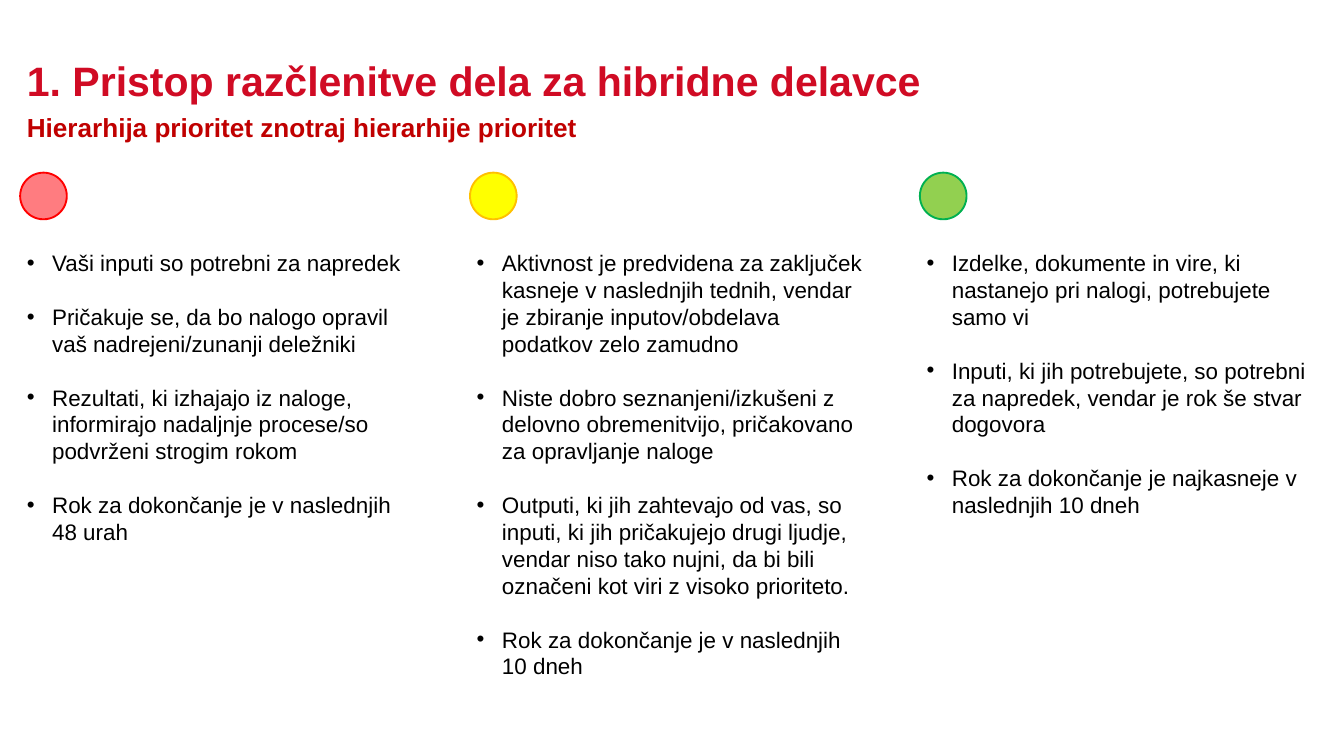
"""Build a slide with three priority columns for hybrid workers."""
from dataclasses import dataclass

import lxml.etree
import pptx
import pptx.dml.color
import pptx.enum.shapes
import pptx.enum.text
import pptx.oxml.ns
import pptx.util

Pt = pptx.util.Pt


@dataclass(frozen=True)
class Theme:
    font: str = "Arial"
    title_color: str = "D00B24"
    subtitle_color: str = "C00000"
    body_color: str = "000000"
    title_size: float = 44
    subtitle_size: float = 28
    body_size: float = 24
    line_pitch: float = 28.8


THEME = Theme()
LEFT, COLUMN_PITCH, COLUMN_WIDTH = 21.6, 482, 434
HEADING_WIDTH = 1398
LIGHT_TOP, LIGHT_SIZE = 185, 50
LIST_TOP, BULLET_INDENT = 263.5, 27

COLUMNS = [
    ("FF7C80", "FF0000", 330, [
        "Vaši inputi so potrebni za napredek",
        "Pričakuje se, da bo nalogo opravil vaš nadrejeni/zunanji deležniki",
        "Rezultati, ki izhajajo iz naloge, informirajo nadaljnje procese/so podvrženi strogim rokom",
        "Rok za dokončanje je v naslednjih 48 urah",
    ]),
    ("FFFF00", "FFC000", 480, [
        "Aktivnost je predvidena za zaključek kasneje v naslednjih tednih, vendar je zbiranje "
        "inputov/obdelava podatkov zelo zamudno",
        "Niste dobro seznanjeni/izkušeni z delovno obremenitvijo, pričakovano za opravljanje naloge",
        "Outputi, ki jih zahtevajo od vas, so inputi, ki jih pričakujejo drugi ljudje, vendar niso "
        "tako nujni, da bi bili označeni kot viri z visoko prioriteto.",
        "Rok za dokončanje je v naslednjih 10 dneh",
    ]),
    ("92D050", "00B050", 300, [
        "Izdelke, dokumente in vire, ki nastanejo pri nalogi, potrebujete samo vi",
        "Inputi, ki jih potrebujete, so potrebni za napredek, vendar je rok še stvar dogovora",
        "Rok za dokončanje je najkasneje v naslednjih 10 dneh",
    ]),
]


def rgb(value):
    return pptx.dml.color.RGBColor.from_string(value)


def place(shape, left, top, width, height):
    shape.left, shape.top = Pt(left), Pt(top)
    shape.width, shape.height = Pt(width), Pt(height)
    frame = shape.text_frame
    frame.word_wrap = True
    frame.auto_size = pptx.enum.text.MSO_AUTO_SIZE.NONE
    frame.vertical_anchor = pptx.enum.text.MSO_ANCHOR.TOP
    return frame


def add_run(paragraph, text, size, color, bold=False):
    run = paragraph.add_run()
    run.text = text
    run.font.name = THEME.font
    run.font.size = Pt(size)
    run.font.bold = bold
    run.font.color.rgb = rgb(color)


def set_bullet(paragraph, character=None):
    properties = paragraph._p.get_or_add_pPr()
    indent = Pt(BULLET_INDENT) if character else 0
    properties.set("marL", str(indent))
    properties.set("indent", str(-indent))
    qn = pptx.oxml.ns.qn
    if character:
        lxml.etree.SubElement(properties, qn("a:buFont"), typeface=THEME.font)
        lxml.etree.SubElement(properties, qn("a:buChar"), char=character)
    else:
        lxml.etree.SubElement(properties, qn("a:buNone"))


def fill_heading(shape, top, height, texts, size, color):
    frame = place(shape, LEFT, top, HEADING_WIDTH, height)
    paragraph = frame.paragraphs[0]
    set_bullet(paragraph)
    paragraph.alignment = pptx.enum.text.PP_ALIGN.LEFT
    paragraph.space_before = Pt(0)
    for text in texts:
        add_run(paragraph, text, size, color, bold=True)


def fill_list(shape, left, height, items):
    frame = place(shape, left, LIST_TOP, COLUMN_WIDTH, height)
    for index, item in enumerate(items):
        paragraph = frame.add_paragraph() if index else frame.paragraphs[0]
        set_bullet(paragraph, "•")
        paragraph.alignment = pptx.enum.text.PP_ALIGN.LEFT
        paragraph.line_spacing = Pt(THEME.line_pitch)
        paragraph.space_before = Pt(THEME.line_pitch if index else 0)
        add_run(paragraph, item, THEME.body_size, THEME.body_color)


def add_light(slide, left, fill, outline):
    shape = slide.shapes.add_shape(
        pptx.enum.shapes.MSO_SHAPE.OVAL, Pt(left), Pt(LIGHT_TOP), Pt(LIGHT_SIZE), Pt(LIGHT_SIZE))
    shape.shadow.inherit = False
    shape.fill.solid()
    shape.fill.fore_color.rgb = rgb(fill)
    shape.line.color.rgb = rgb(outline)
    shape.line.width = Pt(2)


def main():
    presentation = pptx.Presentation()
    presentation.slide_width, presentation.slide_height = Pt(1440), Pt(810)
    layout = presentation.slide_layouts.get_by_name("Comparison")
    slide = presentation.slides.add_slide(layout)
    title, subtitle, *lists = list(slide.placeholders)[:5]
    fill_heading(title, 55.4, 60, ["1. ", "Pristop razčlenitve dela za hibridne delavce"],
                 THEME.title_size, THEME.title_color)
    fill_heading(subtitle, 116, 41, ["Hierarhija prioritet znotraj hierarhije prioritet"],
                 THEME.subtitle_size, THEME.subtitle_color)
    for index, (fill, outline, height, items) in enumerate(COLUMNS):
        left = LEFT + index * COLUMN_PITCH
        add_light(slide, left, fill, outline)
        fill_list(lists[index], left, height, items)
    presentation.save("out.pptx")


if __name__ == "__main__":
    main()
